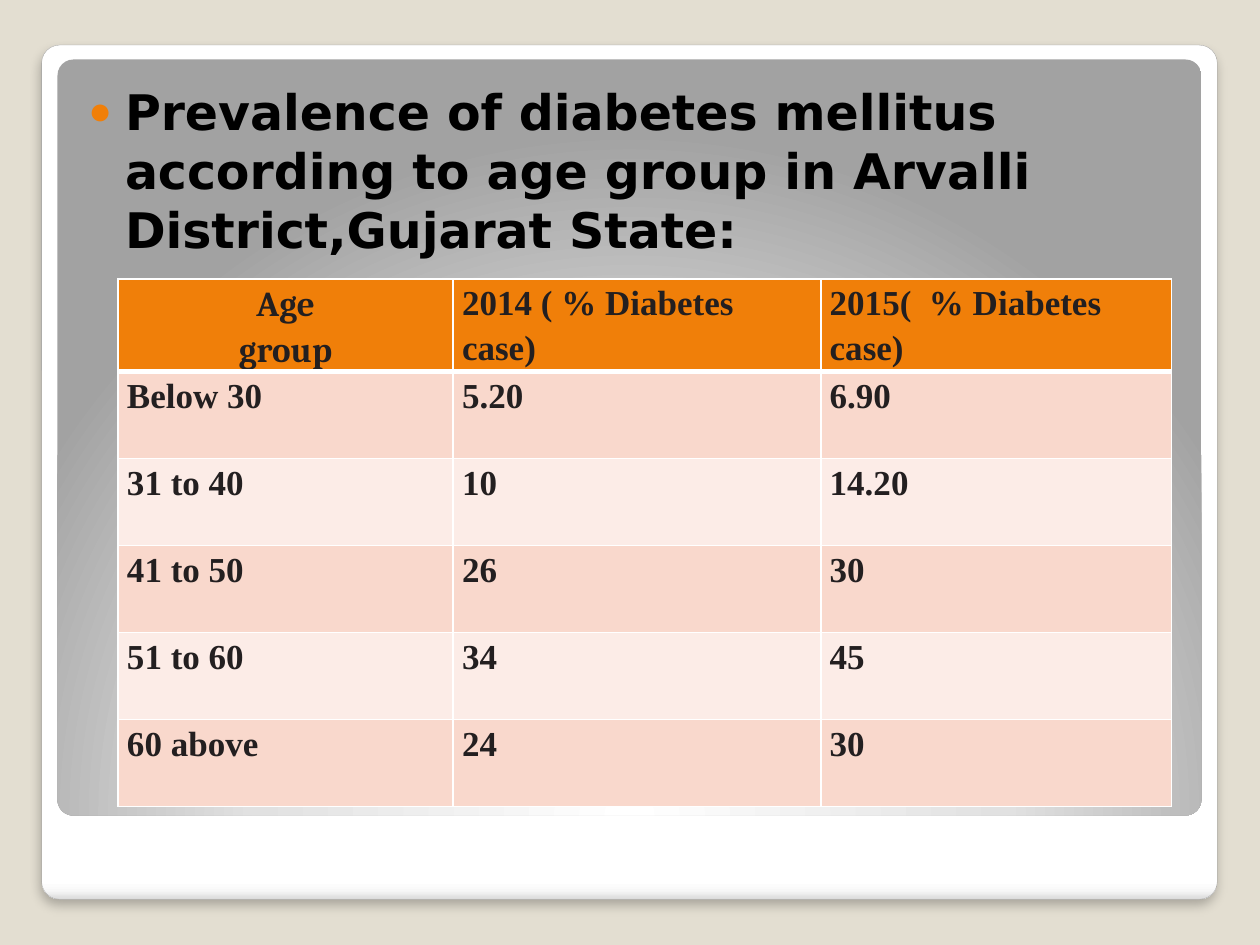
from pptx import Presentation
from pptx.dml.color import RGBColor
from pptx.enum.shapes import MSO_SHAPE as Shape
from pptx.enum.text import MSO_ANCHOR as Anchor, MSO_AUTO_SIZE as AutoSize, PP_ALIGN as Align
from pptx.oxml import parse_xml
from pptx.oxml.ns import nsdecls, qn
from pptx.util import Cm, Pt

BACKGROUND = RGBColor(0xE3, 0xDE, 0xD1)
BLACK = RGBColor(0x00, 0x00, 0x00)
WHITE = RGBColor(0xFF, 0xFF, 0xFF)
FRAME_LINE = RGBColor(0xA4, 0xA4, 0xA4)
FRAME_LOW = RGBColor(0xF7, 0xF7, 0xF7)
FRAME_EDGE = RGBColor(0xDA, 0xDA, 0xDA)
PANEL_MIDDLE = RGBColor(0xE1, 0xE1, 0xE1)
PANEL_EDGE = RGBColor(0xA2, 0xA2, 0xA2)
ORANGE = RGBColor(0xF0, 0x7F, 0x09)
BAND_DARK = RGBColor(0xF9, 0xD8, 0xCC)
BAND_LIGHT = RGBColor(0xFC, 0xEC, 0xE7)
TABLE_TEXT = RGBColor(0x23, 0x1F, 0x20)

HEADING = "Prevalence of diabetes mellitus according to age group in Arvalli District,Gujarat State:"
ROWS = [
    ("Age\ngroup", "2014 ( % Diabetes case)", "2015(  % Diabetes case)"),
    ("Below 30", "5.20", "6.90"),
    ("31 to 40", "10", "14.20"),
    ("41 to 50", "26", "30"),
    ("51 to 60", "34", "45"),
    ("60 above", "24", "30"),
]
COLUMN_SHARES = (0.318, 0.349, 0.333)

LINEAR = '<a:lin ang="5400000" scaled="0"/>'
RADIAL = '<a:path path="circle"><a:fillToRect l="50000" t="175000" r="50000" b="-75000"/></a:path>'


def add_rounded_panel(slide, box, stops, direction):
    """Add a rounded rectangle with a gradient of (percent, colour) stops."""
    panel = slide.shapes.add_shape(Shape.ROUNDED_RECTANGLE, *box)
    panel.adjustments[0] = 0.021
    panel.shadow.inherit = False
    panel.line.fill.background()
    panel.fill.background()
    stop_list = "".join(
        f'<a:gs pos="{percent * 1000}"><a:srgbClr val="{colour}"/></a:gs>'
        for percent, colour in stops
    )
    gradient = parse_xml(
        f'<a:gradFill {nsdecls("a")} rotWithShape="1"><a:gsLst>{stop_list}</a:gsLst>{direction}</a:gradFill>'
    )
    properties = panel.element.spPr
    properties.replace(properties.find(qn("a:noFill")), gradient)
    return panel


def add_backdrop(slide, box):
    """Draw the white frame in the box and the grey panel inside it."""
    left, top, width, height = box
    frame = add_rounded_panel(
        slide, box, [(0, WHITE), (98, WHITE), (99, FRAME_LOW), (100, FRAME_EDGE)], LINEAR
    )
    frame.line.color.rgb = FRAME_LINE
    frame.line.width = Pt(0.16)
    frame.element.spPr.find(qn("a:effectLst")).append(parse_xml(
        f'<a:outerShdw {nsdecls("a")} blurRad="{Pt(6)}" dist="{Pt(4)}" dir="5400000" rotWithShape="0">'
        '<a:srgbClr val="000000"><a:alpha val="25000"/></a:srgbClr></a:outerShdw>'
    ))
    margin = Cm(0.32)
    panel_box = (left + margin, top + Cm(0.29), width - 2 * margin, height - Cm(1.98))
    add_rounded_panel(
        slide, panel_box, [(0, WHITE), (55, PANEL_MIDDLE), (100, PANEL_EDGE)], RADIAL
    )


def place_heading(slide, box):
    """Put the bulleted heading into the body placeholder, above the backdrop."""
    body = slide.placeholders[1]
    body.left, body.top, body.width, body.height = box
    body.element.getparent().append(body.element)
    frame = body.text_frame
    frame.word_wrap = True
    frame.auto_size = AutoSize.NONE
    frame.vertical_anchor = Anchor.TOP
    frame.margin_left, frame.margin_right = Cm(0.51), Cm(0.25)
    frame.margin_top, frame.margin_bottom = Cm(0.25), Cm(0.13)
    frame.text = HEADING
    paragraph = frame.paragraphs[0]
    paragraph.alignment = Align.LEFT
    paragraph.line_spacing = 1.0
    paragraph.space_before = Pt(2.5)
    font = paragraph.font
    font.name, font.size, font.bold = "DejaVu Sans", Pt(28), True
    font.color.rgb = BLACK
    properties = paragraph._p.get_or_add_pPr()
    properties.set("marL", str(Cm(0.74)))
    properties.set("indent", str(-Cm(0.74)))
    bullet = (
        f'<a:buClr {{0}}><a:srgbClr val="{ORANGE}"/></a:buClr>',
        '<a:buSzPct {0} val="80000"/>',
        '<a:buChar {0} char="●"/>',
    )
    default_run = properties.find(qn("a:defRPr"))
    for part in bullet:
        default_run.addprevious(parse_xml(part.format(nsdecls("a"))))


def format_cell(cell, text, fill, font_name, alignment, bottom_width):
    """Fill one table cell with text, colour and white borders."""
    cell.margin_left = cell.margin_right = Cm(0.18)
    cell.margin_top = cell.margin_bottom = 0
    cell.text = text
    for paragraph in cell.text_frame.paragraphs:
        paragraph.alignment = alignment
        paragraph.line_spacing = 1.15
        font = paragraph.font
        font.name, font.size, font.bold = font_name, Pt(20), True
        font.color.rgb = TABLE_TEXT
    properties = cell._tc.get_or_add_tcPr()
    for side, width in (("L", 1), ("R", 1), ("T", 1), ("B", bottom_width)):
        properties.append(parse_xml(
            f'<a:ln{side} {nsdecls("a")} w="{Pt(width)}"><a:solidFill>'
            f'<a:srgbClr val="{WHITE}"/></a:solidFill></a:ln{side}>'
        ))
    cell.fill.solid()
    cell.fill.fore_color.rgb = fill


def add_prevalence_table(slide, box):
    """Add the age group table with a header and two alternating bands."""
    width, height = box[2:]
    table = slide.shapes.add_table(len(ROWS), len(COLUMN_SHARES), *box).table
    for column, share in zip(table.columns, COLUMN_SHARES):
        column.width = int(width * share)
    for row_index, texts in enumerate(ROWS):
        table.rows[row_index].height = height // len(ROWS)
        is_header = row_index == 0
        fill = ORANGE if is_header else BAND_DARK if row_index % 2 else BAND_LIGHT
        for column_index, text in enumerate(texts):
            is_corner = is_header and column_index == 0
            format_cell(
                table.cell(row_index, column_index), text, fill,
                "Cambria" if is_corner else "Times New Roman",
                Align.CENTER if is_corner else Align.LEFT,
                3 if is_header else 1,
            )
            if row_index == 1:
                top = table.cell(row_index, column_index)._tc.tcPr.find(qn("a:lnT"))
                top.set("w", str(Pt(3)))


def main():
    """Build and save the presentation."""
    presentation = Presentation()
    presentation.slide_width, presentation.slide_height = Cm(25.4), Cm(19.05)
    slide = presentation.slides.add_slide(presentation.slide_layouts[1])
    slide.background.fill.solid()
    slide.background.fill.fore_color.rgb = BACKGROUND
    title = slide.shapes.title.element
    title.getparent().remove(title)
    add_backdrop(slide, (Cm(0.84), Cm(0.91), Cm(23.7), Cm(17.22)))
    place_heading(slide, (Cm(1.27), Cm(1.4), Cm(22.86), Cm(15.62)))
    add_prevalence_table(slide, (Cm(2.38), Cm(5.62), Cm(21.24), Cm(10.52)))
    presentation.save("out.pptx")


if __name__ == "__main__":
    main()
